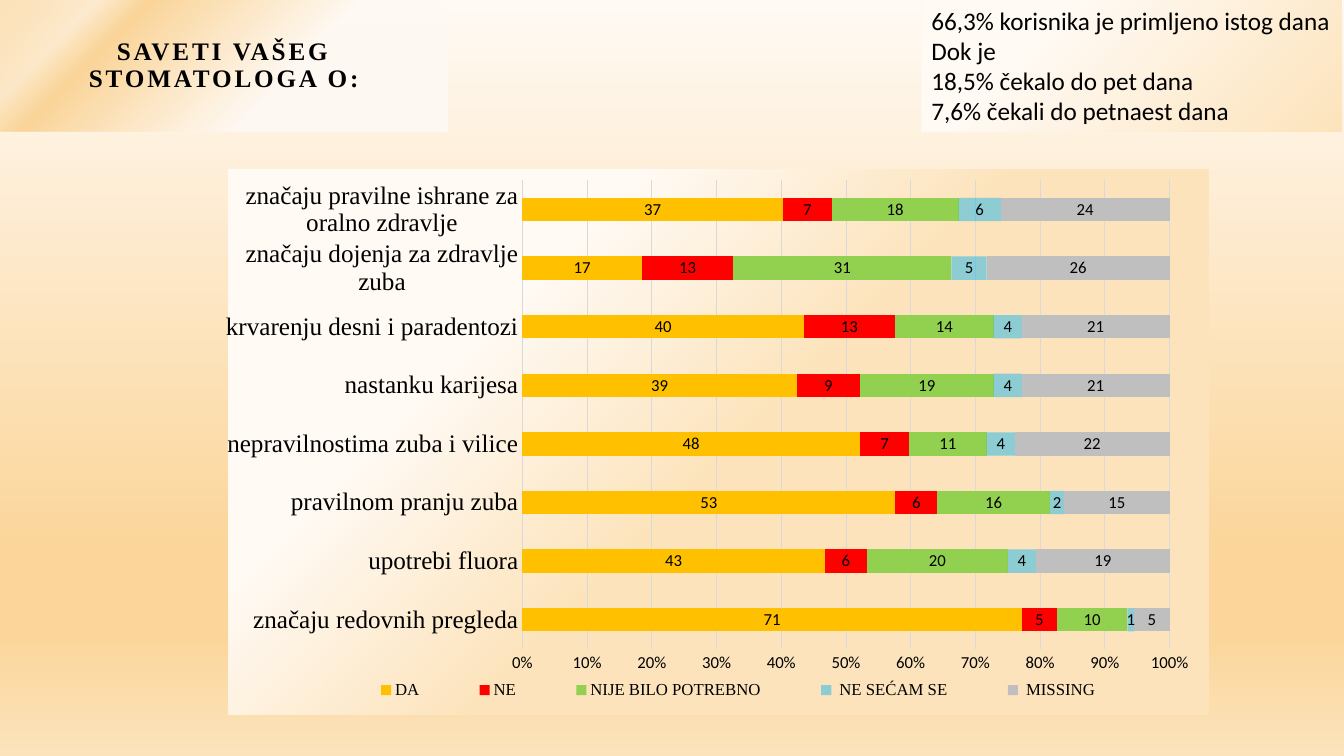
from dataclasses import dataclass
from typing import Optional

from lxml import etree
from pptx import Presentation
from pptx import util as u
from pptx.chart.data import CategoryChartData
from pptx.dml.color import RGBColor
from pptx.enum import chart as charts, text
from pptx.oxml import parse_xml
from pptx.oxml.ns import nsdecls, qn

EMU_PER_PX = 9144  # 100 px to the inch
COLORS = {
    "cream": "FFFAF4", "amber": "FBD599", "peach": "FCE3BB",
    "black": "000000", "grid": "D9D9D9", "yellow": "FFC000",
    "red": "FF0000", "green": "92D050", "blue": "00B0F0", "gray": "BFBFBF",
}
SERIF, SANS = "Times New Roman", "Calibri"


@dataclass(frozen=True)
class Area:
    left: int
    top: int
    width: int
    height: int

    def emu(self) -> list[u.Emu]:
        sides = (self.left, self.top, self.width, self.height)
        return [u.Emu(side * EMU_PER_PX) for side in sides]


@dataclass(frozen=True)
class Stop:
    position: int
    color: str
    alpha: int = 100


@dataclass(frozen=True)
class Answer:
    name: str
    color: str
    values: tuple[int, ...]
    alpha: int = 100


TITLE_AREA = Area(0, 0, 444, 130)
NOTE_AREA = Area(914, 0, 417, 131)
CHART_AREA = Area(224, 168, 975, 541)

BACKDROP = [Stop(0, "cream"), Stop(74, "amber"), Stop(83, "amber"), Stop(100, "peach")]
TITLE_GLOW = [Stop(37, "cream"), Stop(74, "amber"), Stop(83, "amber", 39), Stop(100, "peach")]
NOTE_GLOW = [Stop(27, "cream"), Stop(100, "peach")]
CHART_GLOW = [Stop(27, "cream"), Stop(52, "peach")]

NOTE_LINES = [
    "66,3% korisnika je primljeno istog dana",
    "Dok je",
    "18,5% čekalo do pet dana",
    "7,6% čekali do petnaest dana",
]
TOPICS = [
    "značaju redovnih pregleda", "upotrebi fluora", "pravilnom pranju zuba",
    "nepravilnostima zuba i vilice", "nastanku karijesa",
    "krvarenju desni i paradentozi", "značaju dojenja za zdravlje zuba",
    "značaju pravilne ishrane za oralno zdravlje",
]
ANSWERS = [
    Answer("DA", "yellow", (71, 43, 53, 48, 39, 40, 17, 37)),
    Answer("NE", "red", (5, 6, 6, 7, 9, 13, 13, 7)),
    Answer("NIJE BILO POTREBNO", "green", (10, 20, 16, 11, 19, 14, 31, 18)),
    Answer(" NE SEĆAM SE", "blue", (1, 4, 2, 4, 4, 4, 5, 6), alpha=44),
    Answer(" MISSING", "gray", (5, 19, 15, 22, 21, 21, 26, 24)),
]


def rgb(name: str) -> RGBColor:
    return RGBColor.from_string(COLORS[name])


def gradient(stops: list[Stop], focus: Optional[str] = None):
    """Radial from the corner named by focus, else straight down."""
    corners = {
        "top left": 'r="100000" b="100000"',
        "bottom right": 'l="100000" t="100000"',
    }
    marks = "".join(
        f'<a:gs pos="{stop.position * 1000}"><a:srgbClr val="{COLORS[stop.color]}">'
        f'<a:alpha val="{stop.alpha * 1000}"/></a:srgbClr></a:gs>'
        for stop in stops
    )
    if focus:
        course = f'<a:path path="circle"><a:fillToRect {corners[focus]}/></a:path>'
    else:
        course = '<a:lin ang="5400000" scaled="0"/>'
    return parse_xml(
        f'<a:gradFill {nsdecls("a")} rotWithShape="1"><a:gsLst>{marks}</a:gsLst>{course}</a:gradFill>'
    )


def fill_gradient(owner, fill, stops: list[Stop], focus: Optional[str] = None) -> None:
    fill.solid()
    solid = next(owner.iter(qn("a:solidFill")))
    solid.getparent().replace(solid, gradient(stops, focus))


def style_font(font, *, size: int, face: str, bold: bool = False) -> None:
    font.size, font.name, font.bold = u.Pt(size), face, bold
    font.color.rgb = rgb("black")


def write(para, words: str, *, size: int, face: str, bold: bool = False, spacing: int = 0) -> None:
    span = para.add_run()
    span.text = words
    style_font(span.font, size=size, face=face, bold=bold)
    if spacing:
        span.font._element.set("spc", str(spacing * 100))


def place(element, *, inner: bool = False, **shares: float) -> None:
    """Give a plot area or legend its share of the chart."""
    for old in element.findall(qn("c:layout")):
        element.remove(old)
    target = '<c:layoutTarget val="inner"/>' if inner else ""
    modes = "".join(f'<c:{side}Mode val="edge"/>' for side in "xy")
    sizes = "".join(f'<c:{side} val="{share}"/>' for side, share in shares.items())
    layout = parse_xml(
        f'<c:layout {nsdecls("c")}><c:manualLayout>{target}{modes}{sizes}</c:manualLayout></c:layout>'
    )
    position = element.find(qn("c:legendPos"))
    if position is None:
        element.insert(0, layout)
    else:
        position.addnext(layout)


def add_title(page) -> None:
    box = page.shapes.title
    box.left, box.top, box.width, box.height = TITLE_AREA.emu()
    fill_gradient(box.element, box.fill, TITLE_GLOW, "bottom right")
    frame = box.text_frame
    frame.word_wrap, frame.auto_size = True, text.MSO_AUTO_SIZE.NONE
    frame.vertical_anchor = text.MSO_ANCHOR.MIDDLE
    frame.margin_left = frame.margin_right = u.Emu(20 * EMU_PER_PX)
    frame.margin_top = frame.margin_bottom = u.Emu(20 * EMU_PER_PX)
    para = frame.paragraphs[0]
    para.alignment, para.line_spacing = text.PP_ALIGN.CENTER, 0.9
    write(para, "SAVETI VAŠEG STOMATOLOGA O:", size=18, face=SERIF, bold=True, spacing=2)


def add_note(page) -> None:
    box = page.shapes.add_textbox(*NOTE_AREA.emu())
    fill_gradient(box.element, box.fill, NOTE_GLOW, "top left")
    frame = box.text_frame
    frame.word_wrap, frame.auto_size = False, text.MSO_AUTO_SIZE.SHAPE_TO_FIT_TEXT
    for index, line in enumerate(NOTE_LINES):
        para = frame.add_paragraph() if index else frame.paragraphs[0]
        write(para, line, size=18, face=SANS)


def add_answers_chart(page) -> None:
    data = CategoryChartData()
    data.categories = TOPICS
    for answer in ANSWERS:
        data.add_series(answer.name, answer.values)
    chart = page.shapes.add_chart(
        charts.XL_CHART_TYPE.BAR_STACKED_100, *CHART_AREA.emu(), data
    ).chart
    chart.has_title = False
    style_font(chart.font, size=10, face=SANS)

    # Chart background
    props = parse_xml(f'<c:spPr {nsdecls("c", "a")}><a:ln><a:noFill/></a:ln></c:spPr>')
    props.insert(0, gradient(CHART_GLOW, "top left"))
    chart.element.find(qn("c:chart")).addnext(props)

    # Bars and their values
    plot = chart.plots[0]
    plot.gap_width, plot.overlap, plot.vary_by_categories = 150, 100, False
    for answer, series in zip(ANSWERS, plot.series):
        series.format.fill.solid()
        series.format.fill.fore_color.rgb = rgb(answer.color)
        if answer.alpha < 100:
            color = next(series._element.iter(qn("a:srgbClr")))
            etree.SubElement(color, qn("a:alpha")).set("val", str(answer.alpha * 1000))
        labels = series.data_labels
        labels.show_value, labels.position = True, charts.XL_LABEL_POSITION.CENTER
        style_font(labels.font, size=12, face=SANS)

    # Axes
    topics, shares = chart.category_axis, chart.value_axis
    for axis, size, face in ((topics, 18, SERIF), (shares, 12, SANS)):
        axis.major_tick_mark = axis.minor_tick_mark = charts.XL_TICK_MARK.NONE
        style_font(axis.tick_labels.font, size=size, face=face)
    shares.has_major_gridlines = True
    shares.format.line.fill.background()
    shares.tick_labels.number_format, shares.tick_labels.number_format_is_linked = "0%", False
    for line in (topics.format.line, shares.major_gridlines.format.line):
        line.color.rgb, line.width = rgb("grid"), u.Pt(0.75)

    # Legend and layout
    chart.has_legend = True
    chart.legend.position = charts.XL_LEGEND_POSITION.BOTTOM
    chart.legend.include_in_layout = False
    style_font(chart.legend.font, size=12, face=SERIF)
    place(next(chart.element.iter(qn("c:plotArea"))), inner=True, x=0.3, y=0.02, w=0.66, h=0.86)
    place(next(chart.element.iter(qn("c:legend"))), x=0.1, y=0.93, w=0.84, h=0.05)


def main() -> None:
    deck = Presentation()
    deck.slide_width, deck.slide_height = (u.Emu(side * EMU_PER_PX) for side in (1333, 750))
    page = deck.slides.add_slide(deck.slide_layouts[5])
    fill_gradient(page.element, page.background.fill, BACKDROP)
    add_title(page)
    add_answers_chart(page)
    add_note(page)
    deck.save("out.pptx")


if __name__ == "__main__":
    main()
